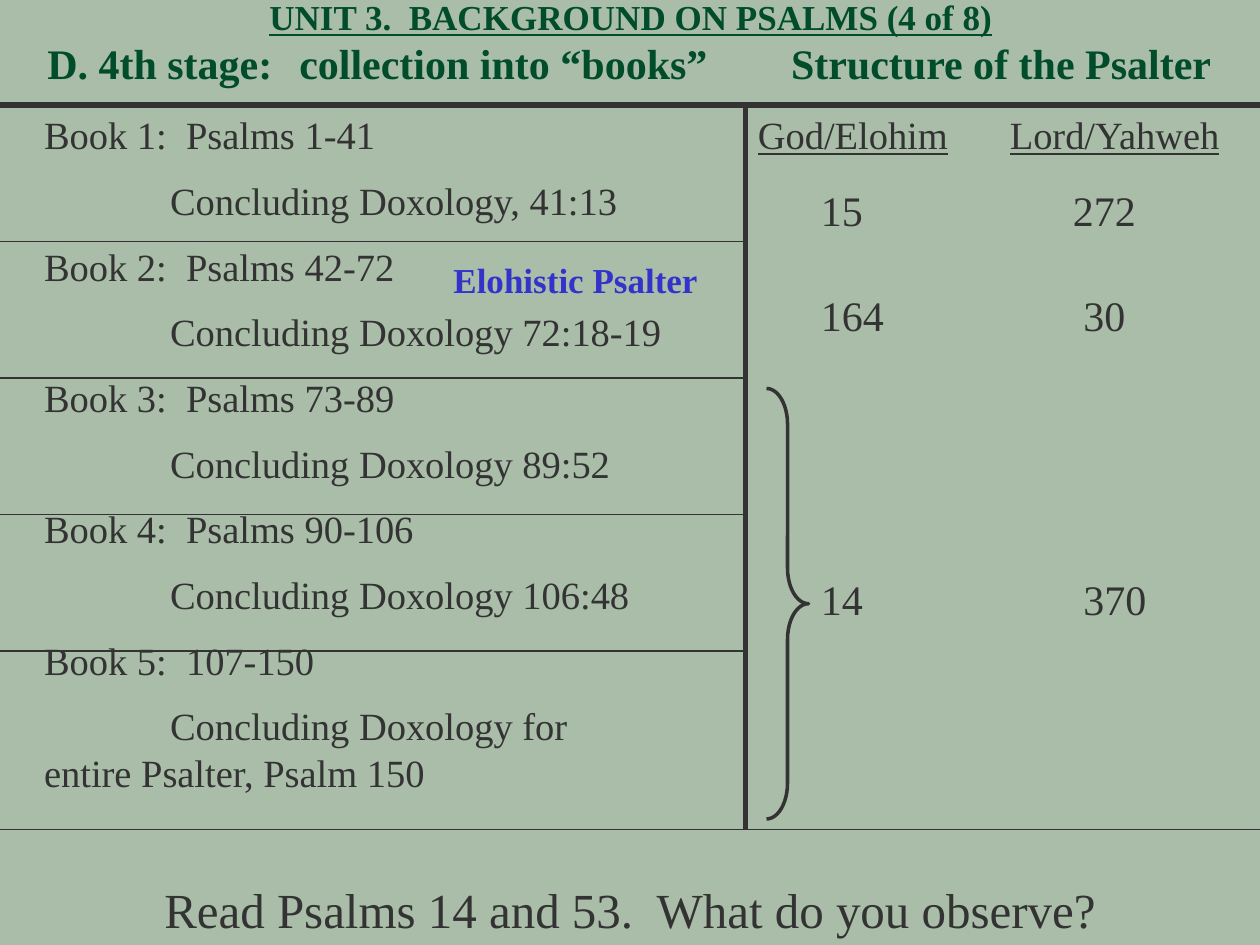
from lxml import etree
from pptx import Presentation
from pptx.dml.color import RGBColor
from pptx.enum import shapes, text
from pptx.oxml.ns import qn
from pptx.util import Pt

COLORS = {"back": "A9BDA9", "ink": "333333", "title": "004C2B", "accent": "3333CC"}
FONT = "Times New Roman"
WIDTH, HEIGHT = 720, 540
TOP_RULE, BOTTOM_RULE, DIVIDER = 60, 474, 426
BOOK_RULES = [138, 216, 294, 372]
BOOK_GAP = 11.15
BOOKS = [
    ("Book 1:  Psalms 1-41", "Concluding Doxology, 41:13"),
    ("Book 2:  Psalms 42-72", "Concluding Doxology 72:18-19"),
    ("Book 3:  Psalms 73-89", "Concluding Doxology 89:52"),
    ("Book 4:  Psalms 90-106", "Concluding Doxology 106:48"),
    ("Book 5:  107-150", "Concluding Doxology for\ventire Psalter, Psalm 150"),
]
# top, Elohim count, Yahweh count, tab stop
COUNTS = [(102, "15", "272", 144), (162, "164", "30", 150), (324, "14", "370", 150)]


def rgb(name):
    return RGBColor.from_string(COLORS[name])


class SlideBuilder:
    def __init__(self, prs):
        self.slide = prs.slides.add_slide(prs.slide_layouts[1])
        fill = self.slide.background.fill
        fill.solid()
        fill.fore_color.rgb = rgb("back")

    def place(self, sp, left, top, width, height):
        sp.left, sp.top, sp.width, sp.height = map(Pt, (left, top, width, height))
        tf = sp.text_frame
        tf.word_wrap = True
        tf.auto_size = text.MSO_AUTO_SIZE.NONE
        return tf

    def paragraph(self, p, runs, size, color="ink", bold=False, align="LEFT",
                  before=0, tabs=(), first_indent=None):
        """Fill p with (text, underlined) runs; first_indent also turns the bullet off."""
        pPr = p._p.get_or_add_pPr()
        if first_indent is not None:
            pPr.set("marL", "0")
            pPr.set("indent", str(Pt(first_indent)))
            etree.SubElement(pPr, qn("a:buNone"))
        if tabs:
            tab_list = etree.SubElement(pPr, qn("a:tabLst"))
            for pos in tabs:
                etree.SubElement(tab_list, qn("a:tab"), pos=str(Pt(pos)), algn="l")
        p.alignment = getattr(text.PP_ALIGN, align)
        p.space_before = Pt(before)
        for words, underlined in runs:
            for i, line in enumerate(words.split("\v")):
                if i:
                    p.add_line_break()
                r = p.add_run()
                r.text = line
                r.font.name, r.font.size = FONT, Pt(size)
                r.font.bold, r.font.underline = bold, underlined
                r.font.color.rgb = rgb(color)

    def title(self, heading, subheading):
        tf = self.place(self.slide.shapes.title, 0, 0, WIDTH, 54)
        tf.vertical_anchor = text.MSO_ANCHOR.BOTTOM
        tf.margin_left, tf.margin_right = Pt(27), Pt(26)
        self.paragraph(tf.paragraphs[0], [(heading, True)], 20, "title", True, "CENTER")
        self.paragraph(tf.add_paragraph(), [(subheading, False)], 24, "title", True,
                       tabs=(144, 425))

    def book_list(self, books):
        tf = self.place(self.slide.placeholders[1], 18, TOP_RULE, 396, 417)
        for i, (book, doxology) in enumerate(books):
            p = tf.add_paragraph() if i else tf.paragraphs[0]
            self.paragraph(p, [(book, False)], 22, before=BOOK_GAP if i else 0,
                           first_indent=0)
            self.paragraph(tf.add_paragraph(), [(doxology, False)], 22,
                           before=BOOK_GAP, first_indent=72)

    def label(self, box, runs, size, **style):
        tf = self.place(self.slide.shapes.add_textbox(0, 0, 0, 0), *box)
        self.paragraph(tf.paragraphs[0], runs, size, **style)

    def rule(self, x1, y1, x2, y2, weight=0.75):
        line = self.slide.shapes.add_connector(
            shapes.MSO_CONNECTOR.STRAIGHT, *map(Pt, (x1, y1, x2, y2)))
        line.line.color.rgb = rgb("ink")
        line.line.width = Pt(weight)
        etree.SubElement(line._element.spPr, qn("a:effectLst"))

    def brace(self, left, top, width, height):
        sp = self.slide.shapes.add_shape(
            shapes.MSO_SHAPE.RIGHT_BRACE, *map(Pt, (left, top, width, height)))
        sp.adjustments[0], sp.adjustments[1] = 0.85, 0.5
        sp.shadow.inherit = False
        sp.fill.background()
        sp.line.color.rgb = rgb("ink")
        sp.line.width = Pt(2)


def main():
    prs = Presentation()
    prs.slide_width, prs.slide_height = Pt(WIDTH), Pt(HEIGHT)
    b = SlideBuilder(prs)
    b.title("UNIT 3.  BACKGROUND ON PSALMS (4 of 8)",
            "D. 4th stage:\tcollection into “books”\tStructure of the Psalter")
    b.book_list(BOOKS)

    b.rule(DIVIDER, TOP_RULE, DIVIDER, BOTTOM_RULE, 3)
    b.rule(0, TOP_RULE, WIDTH, TOP_RULE, 3)
    for y in BOOK_RULES:
        b.rule(0, y, DIVIDER, y)
    b.rule(0, BOTTOM_RULE, WIDTH, BOTTOM_RULE)

    b.label((DIVIDER, TOP_RULE, 294, 34),
            [("God/Elohim", True), ("\t", False), ("Lord/Yahweh", True)], 22, tabs=(144,))
    b.brace(438, 222, 24, 246)
    for top, elohim, yahweh, stop in COUNTS:
        b.label((462, top, 216, 36), [(f"{elohim}\t{yahweh}", False)], 24, tabs=(stop,))
    b.label((252, 144, 168, 31), [("Elohistic Psalter", False)], 20,
            color="accent", bold=True)
    b.label((0, 499, WIDTH, 41),
            [("Read Psalms 14 and 53.  What do you observe?", False)], 28, align="CENTER")
    prs.save("out.pptx")


if __name__ == "__main__":
    main()
